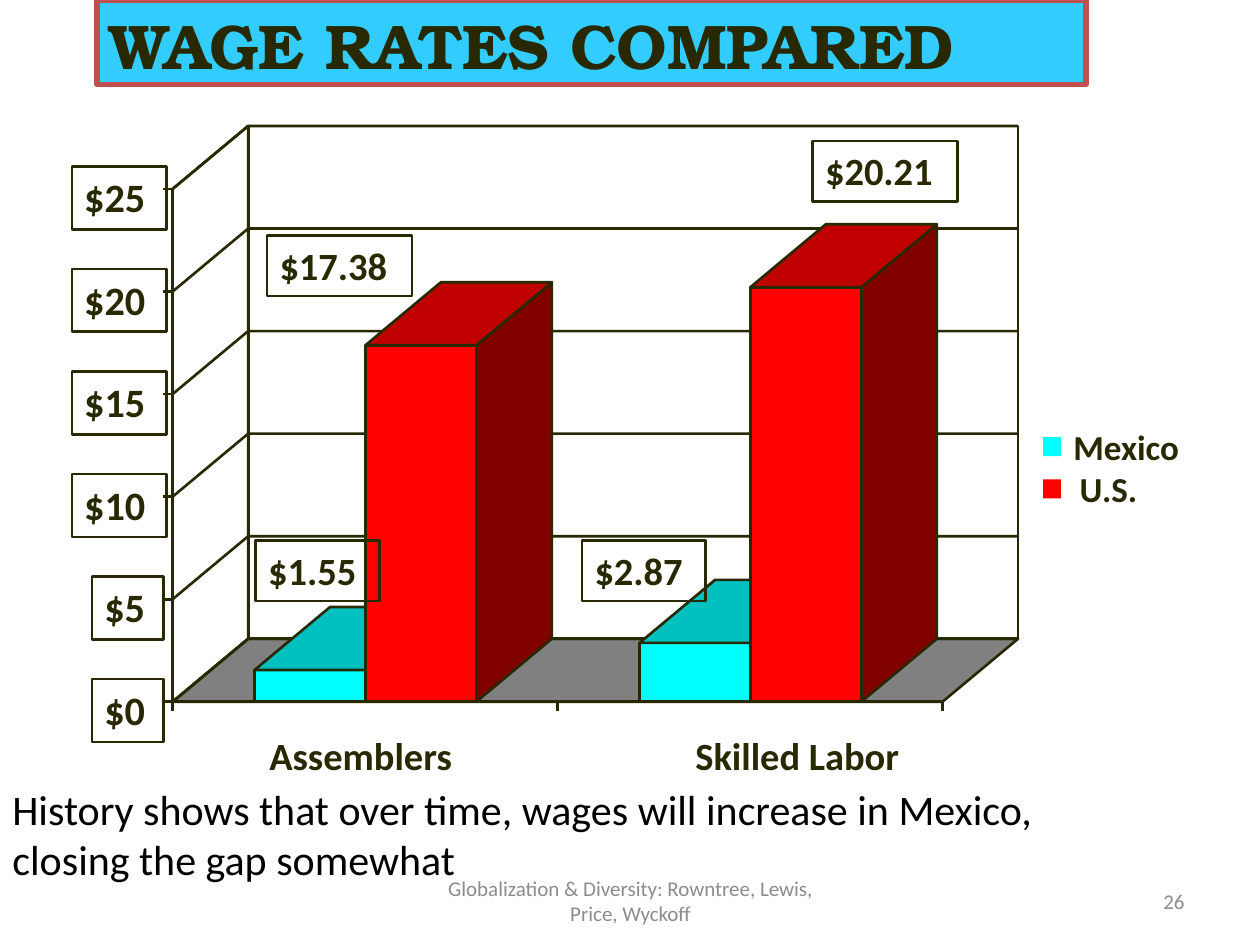
from lxml.etree import SubElement
from pptx import Presentation
from pptx.dml.color import RGBColor
from pptx.enum.shapes import MSO_CONNECTOR, MSO_SHAPE
from pptx.enum.text import MSO_ANCHOR, PP_ALIGN
from pptx.oxml.ns import qn
from pptx.util import Inches, Pt

INK = RGBColor(0x28, 0x29, 0x00)
BLACK = RGBColor(0x00, 0x00, 0x00)
GRAY = RGBColor(0x8C, 0x8C, 0x8C)
FLOOR = RGBColor(0x80, 0x80, 0x80)
SKY = RGBColor(0x33, 0xCC, 0xFF)
BRICK = RGBColor(0xC0, 0x50, 0x4D)
CYAN = RGBColor(0x00, 0xFF, 0xFF)
CYAN_TOP = RGBColor(0x00, 0xC0, 0xC0)
CYAN_SIDE = RGBColor(0x00, 0x80, 0x80)
RED = RGBColor(0xFF, 0x00, 0x00)
RED_TOP = RGBColor(0xC0, 0x00, 0x00)
RED_SIDE = RGBColor(0x80, 0x00, 0x00)

SERIES = [
    ("Mexico", CYAN, CYAN_TOP, CYAN_SIDE),
    ("U.S.", RED, RED_TOP, RED_SIDE),
]
CATEGORIES = [
    ("Assemblers", (0.67, 1.93), [(1.55, 0.66, 3.29, 0.98), (17.38, 0.75, 0.87, 1.15)]),
    ("Skilled Labor", (4.05, 2.12), [(2.87, 3.25, 3.29, 0.98), (20.21, 5.08, 0.12, 1.15)]),
]
DEPTH_X, DEPTH_Y = 0.6, 0.5
BAR_WIDTH, BAR_OFFSET = 0.88, 0.65
AXIS_MAXIMUM, AXIS_STEP = 25, 5


def style(shape, fill=None, line=None, weight=1.5):
    shape.shadow.inherit = False
    if fill is None:
        shape.fill.background()
    else:
        shape.fill.solid()
        shape.fill.fore_color.rgb = fill
    if line is None:
        shape.line.fill.background()
    else:
        shape.line.color.rgb = line
        shape.line.width = Pt(weight)
    return shape


def add_rectangle(slide, box, **look):
    lengths = [Inches(value) for value in box]
    return style(slide.shapes.add_shape(MSO_SHAPE.RECTANGLE, *lengths), **look)


def add_text(slide, box, text, size=22, font="Calibri", color=INK, bold=True,
             align=PP_ALIGN.LEFT, anchor=MSO_ANCHOR.TOP, framed=False, **look):
    if framed:
        shape = add_rectangle(slide, box, **look)
    else:
        shape = slide.shapes.add_textbox(*[Inches(value) for value in box])
    frame = shape.text_frame
    frame.word_wrap = True
    frame.vertical_anchor = anchor
    paragraph = frame.paragraphs[0]
    paragraph.alignment = align
    run = paragraph.add_run()
    run.text = text
    run.font.size = Pt(size)
    run.font.name = font
    run.font.bold = bold
    run.font.color.rgb = color


def add_outline(slide, points, fill=None, closed=True):
    corners = [(Inches(x), Inches(y)) for x, y in points]
    builder = slide.shapes.build_freeform(*corners[0])
    builder.add_line_segments(corners[1:], close=closed)
    style(builder.convert_to_shape(), fill=fill, line=INK)


def add_line(slide, *ends):
    line = slide.shapes.add_connector(
        MSO_CONNECTOR.STRAIGHT, *[Inches(value) for value in ends])
    line.line.color.rgb = INK
    line.line.width = Pt(1.5)
    SubElement(line._element.spPr, qn("a:effectLst"))


def add_bar(slide, left, top, bottom, front, lid, side):
    right = left + BAR_WIDTH
    add_outline(slide, [(right, bottom), (right, top), (right + DEPTH_X, top - DEPTH_Y),
                        (right + DEPTH_X, bottom - DEPTH_Y)], fill=side)
    add_outline(slide, [(left, bottom), (left, top), (right, top), (right, bottom)], fill=front)
    add_outline(slide, [(left, top), (left + DEPTH_X, top - DEPTH_Y),
                        (right + DEPTH_X, top - DEPTH_Y), (right, top)], fill=lid)


def add_walls(slide, left, top, width, height, levels):
    right, bottom = left + width, top + height
    back_left, back_bottom = left + DEPTH_X, bottom - DEPTH_Y
    add_outline(slide, [(left, bottom), (back_left, back_bottom), (right, back_bottom),
                        (right - DEPTH_X, bottom)], fill=FLOOR)
    for level in levels:
        add_outline(slide, [(left, level), (back_left, level - DEPTH_Y),
                            (right, level - DEPTH_Y)], closed=False)
    add_outline(slide, [(left, bottom), (left, top + DEPTH_Y), (back_left, top),
                        (back_left, back_bottom)])
    add_outline(slide, [(back_left, back_bottom), (back_left, top), (right, top),
                        (right, back_bottom)])


def add_axes(slide, left, right, bottom, levels):
    add_line(slide, left, bottom, left, levels[-1])
    for index, level in enumerate(levels):
        amount = index * AXIS_STEP
        label_left, label_width = (0.64, 0.57) if amount < 10 else (0.8, 0.75)
        add_line(slide, left, level, left - 0.08, level)
        add_text(slide, (left - label_left, level - 0.18, label_width, 0.5),
                 f"${amount}", size=23, framed=True, line=INK)
    add_line(slide, left, bottom, right, bottom)
    for index in range(len(CATEGORIES) + 1):
        x = left + index * (right - left) / len(CATEGORIES)
        add_line(slide, x, bottom, x, bottom + 0.07)


def add_wage_chart(slide, left, top, width, height):
    bottom = top + height
    front_right = left + width - DEPTH_X
    unit = (height - DEPTH_Y) / AXIS_MAXIMUM
    levels = [bottom - amount * unit for amount in range(0, AXIS_MAXIMUM + 1, AXIS_STEP)]
    add_walls(slide, left, top, width, height, levels)
    pitch = (front_right - left) / len(CATEGORIES)
    for index, (name, (name_left, name_width), bars) in enumerate(CATEGORIES):
        add_text(slide, (left + name_left, bottom + 0.19, name_width, 0.46), name)
        first = left + index * pitch + BAR_OFFSET
        for order, (bar, series) in enumerate(zip(bars, SERIES)):
            add_bar(slide, first + order * BAR_WIDTH, bottom - bar[0] * unit, bottom, *series[1:])
        for wage, label_left, label_top, label_width in bars:
            add_text(slide, (left + label_left, top + label_top, label_width, 0.48),
                     f"${wage:.2f}", framed=True, line=INK)
    add_axes(slide, left, front_right, bottom, levels)


def add_legend(slide, left, top, width, height):
    row = height / len(SERIES)
    for index, (name, color, *_) in enumerate(SERIES):
        y = top + index * row
        indent = 0.14 + 0.05 * index
        add_rectangle(slide, (left, y + 0.14, 0.14, 0.15), fill=color)
        add_text(slide, (left + indent, y, width - indent, 0.43), name, size=20)


def add_title(slide, *box):
    add_text(slide, box, "WAGE RATES COMPARED", size=36, font="TeX Gyre Bonum",
             framed=True, fill=SKY, line=BRICK, weight=3)


def add_takeaway(slide, *box):
    add_text(slide, box, "History shows that over time, wages will increase in Mexico, "
             "closing the gap somewhat", size=24, color=BLACK, bold=False)


def add_footer(slide, left, top, width, height):
    note = dict(size=12, color=GRAY, bold=False, anchor=MSO_ANCHOR.MIDDLE)
    add_text(slide, (left, top, 3.17, height),
             "Globalization & Diversity: Rowntree, Lewis, Price, Wyckoff",
             align=PP_ALIGN.CENTER, **note)
    add_text(slide, (left + width - 2.33, top, 2.33, height), "26",
             align=PP_ALIGN.RIGHT, **note)


def main():
    presentation = Presentation()
    presentation.slide_width = Inches(10)
    presentation.slide_height = Inches(7.5)
    slide = presentation.slides.add_slide(presentation.slide_layouts[6])
    add_footer(slide, 3.42, 6.95, 6.08, 0.4)
    add_title(slide, 0.77, 0, 7.85, 0.67)
    add_wage_chart(slide, 1.37, 1, 6.71, 4.57)
    add_legend(slide, 8.28, 3.33, 1.28, 0.67)
    add_takeaway(slide, 0, 6.17, 9, 0.9)
    presentation.save("out.pptx")


if __name__ == "__main__":
    main()
